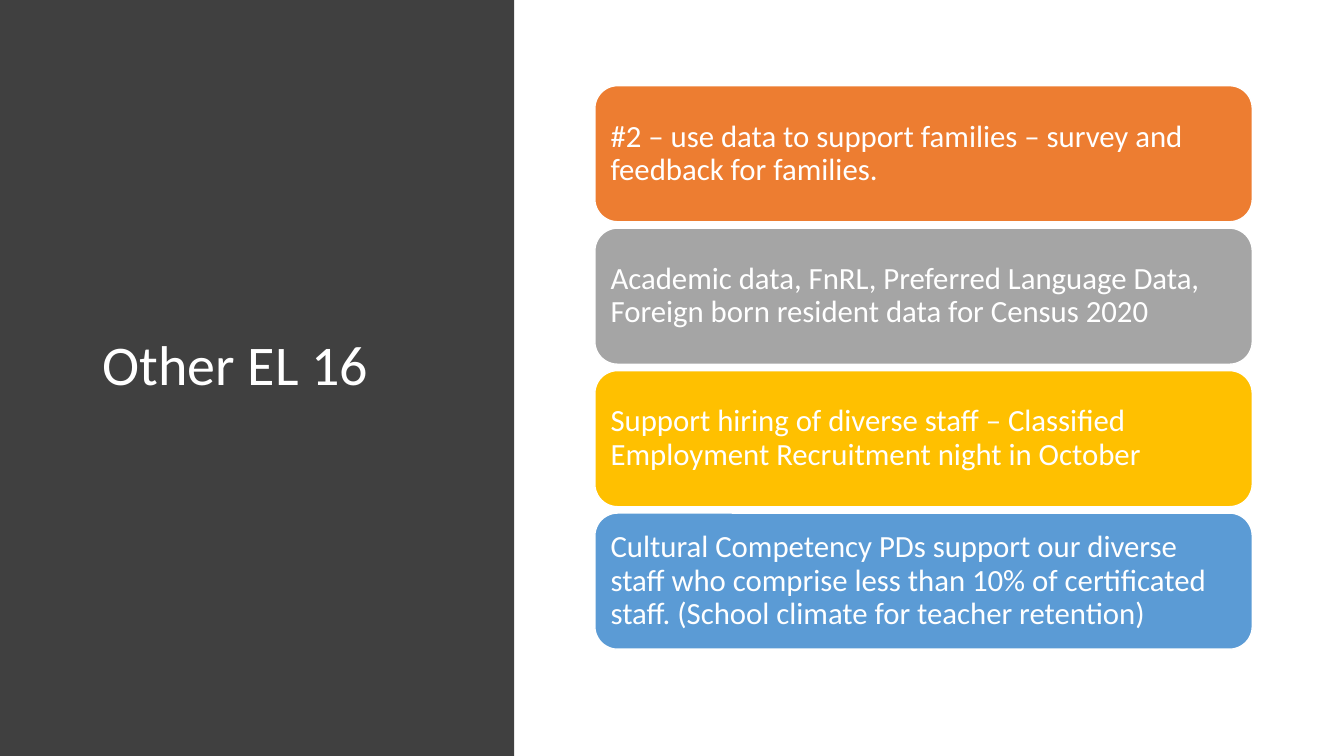
from dataclasses import dataclass

from pptx import Presentation
from pptx.dml.color import RGBColor
from pptx.enum.shapes import MSO_SHAPE as Shape
from pptx.enum.text import MSO_ANCHOR as Anchor, PP_ALIGN as Align
from pptx.shapes.autoshape import Shape as AutoShape
from pptx.slide import Slide
from pptx.text.text import TextFrame
from pptx.util import Inches, Pt

COLORS = {
    "white": "FFFFFF",
    "charcoal": "404040",
    "orange": "ED7D31",
    "gray": "A5A5A5",
    "gold": "FFC000",
    "blue": "5B9BD5",
}
FONT = "Calibri"
CARD_LEFT, CARD_WIDTH, CARD_HEIGHT = 5.9, 6.52, 1.35
STACK_TOP, STACK_BOTTOM = 0.85, 6.44
CARD_INSET = 0.09


@dataclass(frozen=True)
class Card:
    text: str
    color: str


CARDS = [
    Card("#2 – use data to support families – survey and feedback for families.", "orange"),
    Card("Academic data, FnRL, Preferred Language Data, "
         "Foreign born resident data for Census 2020", "gray"),
    Card("Support hiring of diverse staff – Classified "
         "Employment Recruitment night in October", "gold"),
    Card("Cultural Competency PDs support our diverse staff who comprise less than "
         "10% of certificated staff. (School climate for teacher retention)", "blue"),
]


def rgb(name: str) -> RGBColor:
    return RGBColor.from_string(COLORS[name])


def add_filled_shape(slide: Slide, kind: Shape, left: float, top: float,
                     width: float, height: float, color: str) -> AutoShape:
    shape = slide.shapes.add_shape(
        kind, Inches(left), Inches(top), Inches(width), Inches(height))
    shape.shadow.inherit = False
    shape.fill.solid()
    shape.fill.fore_color.rgb = rgb(color)
    shape.line.fill.background()
    return shape


def write_text(frame: TextFrame, text: str, size: int) -> None:
    """Fill the frame with one white, left-aligned, vertically centred paragraph."""
    frame.word_wrap = True
    frame.vertical_anchor = Anchor.MIDDLE
    paragraph = frame.paragraphs[0]
    paragraph.alignment = Align.LEFT
    paragraph.line_spacing = 0.9
    run = paragraph.add_run()
    run.text = text
    run.font.name = FONT
    run.font.size = Pt(size)
    run.font.color.rgb = rgb("white")


def add_card(slide: Slide, card: Card, top: float) -> None:
    shape = add_filled_shape(slide, Shape.ROUNDED_RECTANGLE, CARD_LEFT, top,
                             CARD_WIDTH, CARD_HEIGHT, card.color)
    shape.line.color.rgb = rgb("white")
    shape.line.width = Pt(1)
    frame = shape.text_frame
    frame.margin_left = frame.margin_right = Inches(CARD_INSET)
    frame.margin_top = frame.margin_bottom = Inches(CARD_INSET)
    write_text(frame, card.text, 22)


def main() -> None:
    presentation = Presentation()
    presentation.slide_width = Inches(13.33)
    presentation.slide_height = Inches(7.5)
    slide = presentation.slides.add_slide(presentation.slide_layouts[6])

    add_filled_shape(slide, Shape.RECTANGLE, 0, 0, 5.1, 7.5, "charcoal")
    title = slide.shapes.add_textbox(
        Inches(0.92), Inches(0.68), Inches(3.67), Inches(5.92))
    write_text(title.text_frame, "Other EL 16", 40)

    pitch = (STACK_BOTTOM - STACK_TOP - CARD_HEIGHT) / (len(CARDS) - 1)
    for index, card in enumerate(CARDS):
        add_card(slide, card, STACK_TOP + index * pitch)

    presentation.save("out.pptx")


if __name__ == "__main__":
    main()
